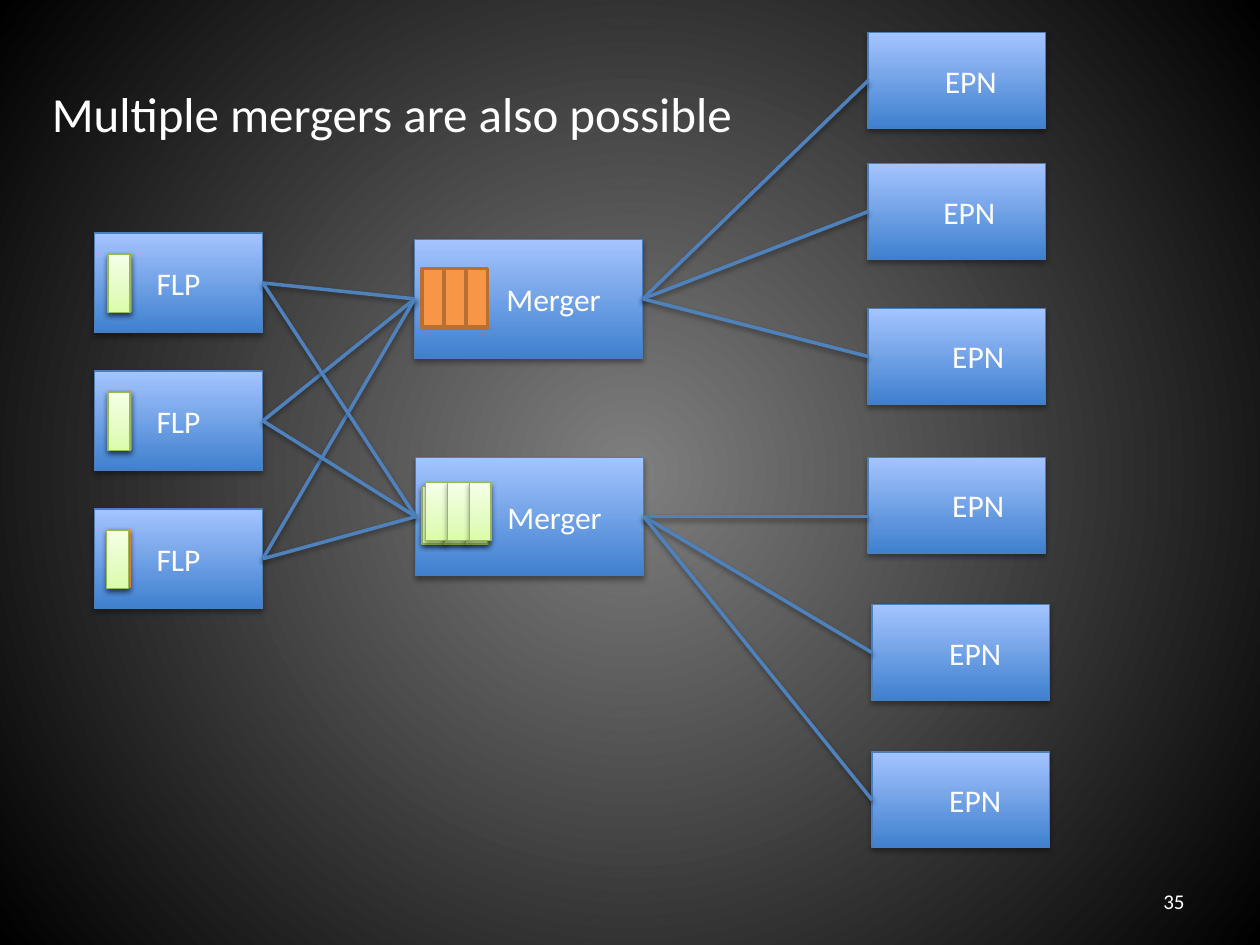
from dataclasses import dataclass
from pptx import Presentation
from pptx.dml.color import RGBColor as Rgb
from pptx.enum.shapes import MSO_CONNECTOR as Link, MSO_SHAPE as Form
from pptx.enum.text import MSO_ANCHOR as Anchor, MSO_AUTO_SIZE as Auto, PP_ALIGN as Align
from pptx.oxml import parse_xml
from pptx.oxml.ns import nsdecls, qn
from pptx.util import Cm, Pt


@dataclass(frozen=True)
class Skin:
    """Line, fill stops and shadow (opacity, distance) of one kind of part."""
    line: str
    width: float
    stops: tuple = ()
    shade: tuple = ()


class Theme:
    """Colours, type sizes and part styles."""
    font, ink = "Calibri", "FFFFFF"
    head, body, foot = 28, 18, 12
    back = ((0, "7F7F7F"), (100, "000000"))
    node = Skin("4B7EBC", 0.75, ((0, "3F80CE"), (100, "A4C4FF")), (35, 23000))
    link = Skin("4F81BD", 2, shade=(38, 20000))
    warm = Skin("F69240", 0.75, ((0, "FF953E"), (100, "FFD2BD")), (35, 23000))
    lime = Skin("98B955", 0.75, ((0, "DAFDA7"), (35, "E4FCC2"), (100, "F5FFE7")), (38, 20000))
    flat = Skin("B76F34", 2, ((0, "F79646"),))


LEFT, RIGHT = 1, 3
CHIP = 0.44, 1.17
UP = '<a:lin ang="16200000" scaled="0"/>'
ROUND = '<a:path path="circle"><a:fillToRect l="50000" t="50000" r="50000" b="50000"/></a:path>'


def put(item, **vals):
    """Set each named value on the item."""
    for name, val in vals.items():
        setattr(item, name, val)


def blend(fill, host, stops, tail):
    """Give the host element a gradient fill."""
    fill.background()
    marks = "".join(f'<a:gs pos="{pos * 1000}"><a:srgbClr val="{tint}"/></a:gs>' for pos, tint in stops)
    grad = parse_xml(f'<a:gradFill {nsdecls("a")} rotWithShape="1"><a:gsLst>{marks}</a:gsLst>{tail}</a:gradFill>')
    host.replace(host.find(qn("a:noFill")), grad)


def edge(part, skin):
    """Set the line of a part, then its shadow or the lack of one."""
    part.line.color.rgb = Rgb.from_string(skin.line)
    part.line.width = Pt(skin.width)
    drop = ""
    if skin.shade:
        alpha, dist = skin.shade
        drop = (f'<a:outerShdw blurRad="40000" dist="{dist}" dir="5400000" rotWithShape="0">'
                f'<a:srgbClr val="000000"><a:alpha val="{alpha * 1000}"/></a:srgbClr></a:outerShdw>')
    part.element.spPr.append(parse_xml(f'<a:effectLst {nsdecls("a")}>{drop}</a:effectLst>'))


def block(shapes, box, skin):
    """Draw one filled rectangle."""
    part = shapes.add_shape(Form.RECTANGLE, *map(Cm, box))
    if len(skin.stops) > 1:
        blend(part.fill, part.element.spPr, skin.stops, UP)
    else:
        part.fill.solid()
        part.fill.fore_color.rgb = Rgb.from_string(skin.stops[0][1])
    edge(part, skin)
    return part


def write(part, text, size, align, **frame):
    """Fill a text frame with one formatted paragraph."""
    put(part.text_frame, **frame)
    para = part.text_frame.paragraphs[0]
    para.text, para.alignment = text, align
    put(para.font, name=Theme.font, size=Pt(size))
    para.font.color.rgb = Rgb.from_string(Theme.ink)


def node(slide, box, text, shift=0):
    """Draw a labelled box whose text is inset further from the left."""
    part = block(slide.shapes, box, Theme.node)
    write(part, text, Theme.body, Align.CENTER, vertical_anchor=Anchor.MIDDLE,
          margin_left=Cm(0.25 + shift))
    return part


def stack(slide, box, dx, dy, skin, count=3):
    """Draw a grouped row of chips inside a box."""
    group = slide.shapes.add_group_shape()
    wide, high = CHIP
    for i in range(count):
        block(group.shapes, (box[0] + dx + i * wide, box[1] + dy, wide, high), skin)


def join(slide, start, end, level=False):
    """Connect the right of one node to the left of another."""
    y = start.top + start.height // 2
    line = slide.shapes.add_connector(Link.STRAIGHT, start.left + start.width, y, end.left, y)
    line.begin_connect(start, RIGHT)
    if not level:
        line.end_connect(end, LEFT)
    edge(line, Theme.link)


def heading(slide, box):
    """Place the title."""
    title = slide.shapes.title
    put(title, **dict(zip(("left", "top", "width", "height"), map(Cm, box))))
    write(title, "Multiple mergers are also possible", Theme.head, Align.LEFT,
          word_wrap=False, auto_size=Auto.NONE, vertical_anchor=Anchor.TOP)


def number(slide, box):
    """Place the slide number."""
    part = slide.shapes.add_textbox(*map(Cm, box))
    write(part, "35", Theme.foot, Align.RIGHT, word_wrap=True, vertical_anchor=Anchor.MIDDLE)


def sources(slide, box):
    """Draw the column of FLP nodes, each with its chips."""
    x, y, wide, high = box
    nodes = []
    for i, nudge in enumerate((0, 0, -0.03)):
        cell = x, y + i * 2.78, wide, high
        nodes.append(node(slide, cell, "FLP"))
        stack(slide, cell, 0.3 + nudge / 2, 0.41, Theme.warm, 1)
        stack(slide, cell, 0.28 + nudge, 0.43, Theme.lime, 1)
    return nodes


def merger(slide, box, piles):
    """Draw a merger node with its piles of chips."""
    part = node(slide, box, "Merger", 1)
    for pile in piles:
        stack(slide, box, *pile)
    return part


def sinks(slide, box):
    """Draw the column of EPN nodes."""
    x, y, wide, high = box
    spots = ((0, 0, 0.56), (0, 2.64, 0.5), (0, 5.56, 0.86),
             (0, 8.56, 0.86), (0.08, 11.53, 0.58), (0.08, 14.5, 0.58))
    return [node(slide, (x + dx, y + dy, wide, high), "EPN", shift) for dx, dy, shift in spots]


def main():
    """Build and save the slide."""
    deck = Presentation()
    put(deck, slide_width=Cm(25.4), slide_height=Cm(19.05))
    slide = deck.slides.add_slide(deck.slide_layouts[5])
    fill = slide.background.fill
    fill.background()
    blend(fill, next(slide.element.iter(qn("p:bgPr"))), Theme.back, ROUND)
    heading(slide, (0.79, 1.55, 14.43, 1.45))
    flps = sources(slide, (1.9, 4.7, 3.4, 2.01))
    hubs = [
        merger(slide, (8.36, 4.83, 4.6, 2.39),
               ((0.15, 0.61, Theme.flat), (0.58, 0.58, Theme.flat, 1), (0.15, 0.58, Theme.flat))),
        merger(slide, (8.38, 9.22, 4.6, 2.39),
               ((0.15, 0.58, Theme.lime), (0.13, 0.58, Theme.lime), (0.2, 0.51, Theme.lime))),
    ]
    epns = sinks(slide, (17.5, 0.66, 3.58, 1.93))
    for i, hub in enumerate(hubs):
        for flp in flps:
            join(slide, flp, hub)
        for j, epn in enumerate(epns[i * 3:i * 3 + 3]):
            join(slide, hub, epn, level=i == 1 and j == 0)
    number(slide, (18.21, 17.65, 5.92, 1.02))
    deck.save("out.pptx")


if __name__ == "__main__":
    main()
